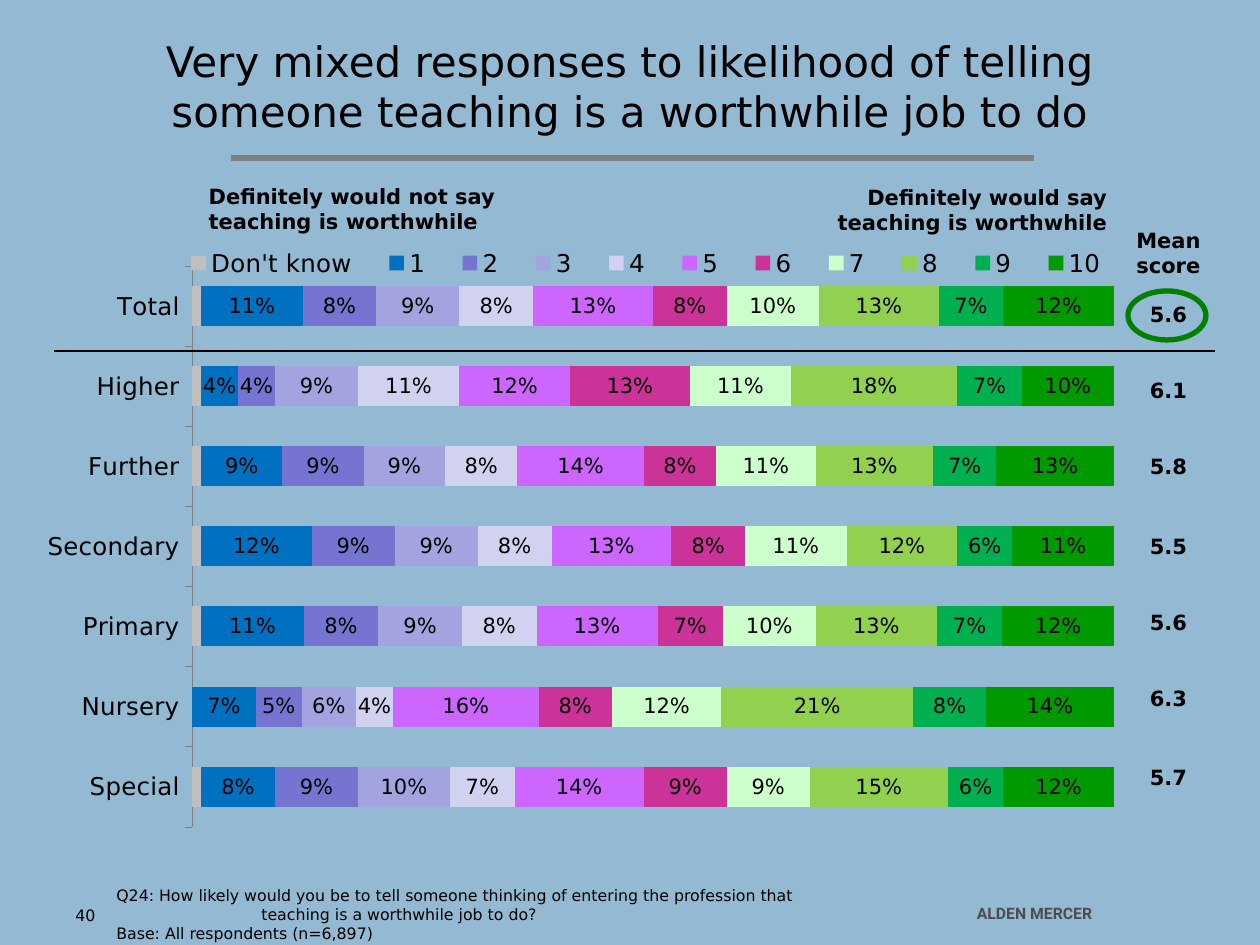
from dataclasses import dataclass

from lxml.etree import SubElement
from pptx import Presentation
from pptx.chart.data import CategoryChartData
from pptx.dml.color import RGBColor
from pptx.enum.chart import XL_CHART_TYPE as ChartType, XL_LEGEND_POSITION as LegendPosition
from pptx.enum.chart import XL_TICK_MARK as TickMark
from pptx.enum.shapes import MSO_CONNECTOR as Connector, MSO_SHAPE as Shape
from pptx.enum.text import MSO_ANCHOR as Anchor, PP_ALIGN as Align
from pptx.oxml.ns import qn
from pptx.util import Pt

PX = 7257  # EMU in one px at 126 px to the inch


@dataclass(frozen=True)
class Theme:
    font: str = "DejaVu Sans"
    footer_font: str = "Roboto"
    background: str = "93B9D3"
    ink: str = "000000"
    grey: str = "808080"
    footer: str = "4D4D4D"
    ring: str = "008000"
    title: int = 24
    axis: int = 14
    label: int = 12
    small: int = 9


THEME = Theme()

TITLE = "Very mixed responses to likelihood of telling someone teaching is a worthwhile job to do"
SCALE_ENDS = [
    ("Definitely would not say teaching is worthwhile", (189, 184, 338, 50), Align.LEFT),
    ("Definitely would say teaching is worthwhile", (800, 185, 327, 50), Align.RIGHT),
]
QUESTION = ("Q24: How likely would you be to tell someone thinking of entering the profession that "
            "teaching is a worthwhile job to do?")
BASE = "Base: All respondents (n=6,897)"

# Each mean with the points of space above it
MEANS = [("Mean score", 0), ("5.6", 14), ("6.1", 29), ("5.8", 29), ("5.5", 31),
         ("5.6", 29), ("6.3", 29), ("5.7", 31)]

SECTORS = ["Special", "Nursery", "Primary", "Secondary", "Further", "Higher", "Total"]
RATINGS = [  # name, colour, percent for each sector
    ("Don't know", "BFBFBF", [1, None, 1, 1, 1, 1, 1]),
    ("1", "0070C0", [8, 7, 11, 12, 9, 4, 11]),
    ("2", "7575D1", [9, 5, 8, 9, 9, 4, 8]),
    ("3", "A3A3E0", [10, 6, 9, 9, 9, 9, 9]),
    ("4", "D1D1F0", [7, 4, 8, 8, 8, 11, 8]),
    ("5", "CC66FF", [14, 16, 13, 13, 14, 12, 13]),
    ("6", "CC3399", [9, 8, 7, 8, 8, 13, 8]),
    ("7", "CCFFCC", [9, 12, 10, 11, 11, 11, 10]),
    ("8", "92D050", [15, 21, 13, 12, 13, 18, 13]),
    ("9", "00B050", [6, 8, 7, 6, 7, 7, 7]),
    ("10", "009900", [12, 14, 12, 11, 13, 10, 12]),
]
CHART = (25, 204, 1111, 635)
PLOT = (192, 266, 922, 561)
LEGEND = (162, 247, 968, 32)


def rgb(colour):
    return RGBColor.from_string(colour)


def px(lengths):
    return [length * PX for length in lengths]


def style(font, size, colour=THEME.ink, bold=False, name=THEME.font):
    font.name, font.size, font.bold = name, Pt(size), bold
    font.color.rgb = rgb(colour)


def write(shape, lines, size, align=Align.LEFT, anchor=Anchor.TOP, **look):
    frame = shape.text_frame
    frame.word_wrap = True
    frame.vertical_anchor = anchor
    frame.text = "\n".join(lines)
    for para in frame.paragraphs:
        para.alignment = align
        for span in para.runs:
            style(span.font, size, **look)
    return frame


def add_text(slide, place, lines, size, **options):
    return write(slide.shapes.add_textbox(*px(place)), lines, size, **options)


def add_outline(slide, kind, place):
    shape = slide.shapes.add_shape(kind, *px(place))
    shape.shadow.inherit = False
    shape.fill.background()
    shape.line.fill.background()
    return shape


def add_rule(slide, left, right, y, colour, width):
    rule = slide.shapes.add_connector(Connector.STRAIGHT, *px((left, y, right, y)))
    rule.line.color.rgb = rgb(colour)
    rule.line.width = Pt(width)
    SubElement(rule._element.spPr, qn("a:effectLst"))


def set_layout(element, place, inner=False):
    """Fix a chart part at a place given in slide px."""
    for old in element.findall(qn("c:layout")):
        element.remove(old)
    layout = SubElement(element, qn("c:layout"))
    manual = SubElement(layout, qn("c:manualLayout"))
    left, top, width, height = CHART
    x, y, w, h = place
    settings = [("layoutTarget", "inner")] if inner else []
    settings += [("xMode", "edge"), ("yMode", "edge"),
                 ("x", (x - left) / width), ("y", (y - top) / height),
                 ("w", w / width), ("h", h / height)]
    for tag, value in settings:
        text = value if isinstance(value, str) else f"{value:.4f}"
        SubElement(manual, qn(f"c:{tag}")).set("val", text)
    element.remove(layout)
    element.insert(0 if inner else 1, layout)  # a legend keeps its position first


def add_ratings_chart(slide):
    data = CategoryChartData(number_format="0%")
    data.categories = SECTORS
    for name, _, percents in RATINGS:
        data.add_series(name, [None if p is None else p / 100 for p in percents])
    chart = slide.shapes.add_chart(ChartType.BAR_STACKED_100, *px(CHART), data).chart
    style(chart.font, THEME.axis)
    chart.has_title = False
    chart.has_legend = True
    chart.legend.position = LegendPosition.TOP
    chart.legend.include_in_layout = False
    style(chart.legend.font, THEME.axis)
    chart.value_axis.has_major_gridlines = False
    chart.value_axis.visible = False
    axis = chart.category_axis
    axis.major_tick_mark = TickMark.OUTSIDE
    axis.format.line.color.rgb = rgb(THEME.grey)
    axis.format.line.width = Pt(0.25)
    style(axis.tick_labels.font, THEME.axis)

    plot = chart.plots[0]
    plot.gap_width, plot.overlap, plot.vary_by_categories = 100, 100, False
    for series, (name, colour, _) in zip(plot.series, RATINGS):
        series.format.fill.solid()
        series.format.fill.fore_color.rgb = rgb(colour)
        if name != "Don't know":
            labels = series.data_labels
            labels.show_value = True
            labels.number_format, labels.number_format_is_linked = "0%", False
            style(labels.font, THEME.label)
    set_layout(chart._chartSpace.chart.plotArea, PLOT, inner=True)
    set_layout(chart.legend._element, LEGEND)


def main():
    deck = Presentation()
    deck.slide_width, deck.slide_height = px((1260, 945))
    slide = deck.slides.add_slide(deck.slide_layouts[6])
    slide.background.fill.solid()
    slide.background.fill.fore_color.rgb = rgb(THEME.background)

    add_rule(slide, 231, 1034, 158, THEME.grey, 3)
    add_text(slide, (898, 898, 273, 32), ["ALDEN MERCER"], THEME.small, align=Align.CENTER,
             colour=THEME.footer, bold=True, name=THEME.footer_font)
    add_ratings_chart(slide)
    add_text(slide, (63, 7, 1134, 157), [TITLE], THEME.title, align=Align.CENTER,
             anchor=Anchor.MIDDLE)

    means = add_outline(slide, Shape.ROUNDED_RECTANGLE, (1111, 225, 115, 567))
    frame = write(means, [text for text, _ in MEANS], THEME.label, align=Align.CENTER,
                  anchor=Anchor.MIDDLE, bold=True)
    frame.margin_left = frame.margin_right = 0
    for para, (_, space) in zip(frame.paragraphs[1:], MEANS[1:]):
        para.space_before = Pt(space)
    add_rule(slide, 54, 1215, 351, THEME.ink, 0.75)

    note = add_text(slide, (104, 880, 740, 71), [QUESTION, BASE], THEME.small)
    hanging = note.paragraphs[0]._p.get_or_add_pPr()
    hanging.set("marL", str(145 * PX))
    hanging.set("indent", str(-145 * PX))

    for text, place, align in SCALE_ENDS:
        label = add_outline(slide, Shape.ROUNDED_RECTANGLE, place)
        label.adjustments[0] = 0.5
        write(label, [text], THEME.label, align=align, anchor=Anchor.MIDDLE, bold=True)

    ring = add_outline(slide, Shape.OVAL, (1128, 291, 78, 49))
    ring.line.color.rgb = rgb(THEME.ring)
    ring.line.width = Pt(3)
    add_text(slide, (63, 900, 294, 45), ["40"], THEME.small)
    deck.save("out.pptx")


if __name__ == "__main__":
    main()
